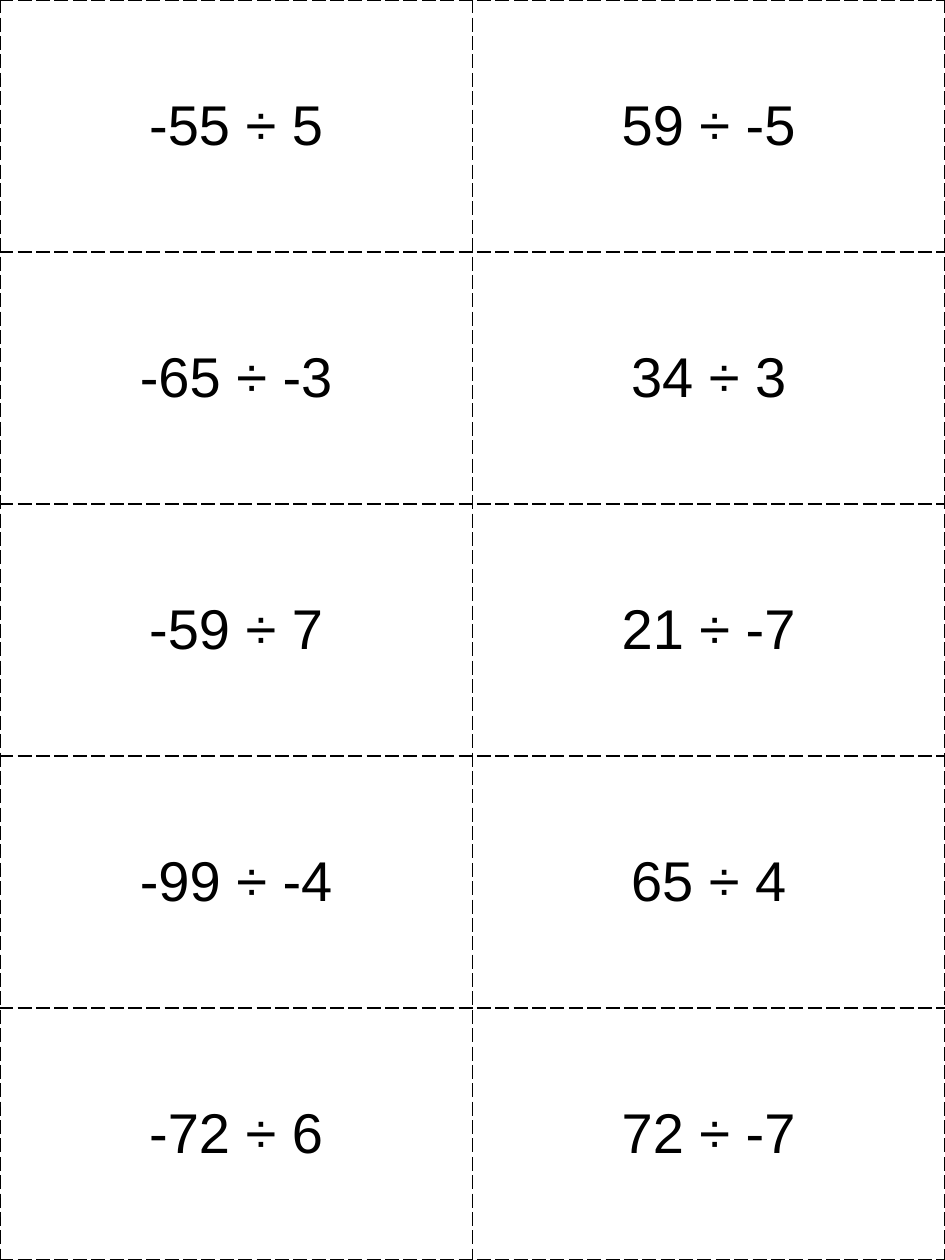
from dataclasses import dataclass

import pptx
import pptx.dml.color
import pptx.enum.text
import pptx.oxml.ns
import pptx.table
import pptx.util
from lxml import etree

Inches = pptx.util.Inches
WIDTH, HEIGHT = 7.5, 10
BLACK, WHITE = "000000", "FFFFFF"


@dataclass
class Card:
    dividend: int
    divisor: int

    @property
    def text(self) -> str:
        return f"{self.dividend} ÷ {self.divisor}"


CARD_ROWS = [
    (Card(-55, 5), Card(59, -5)),
    (Card(-65, -3), Card(34, 3)),
    (Card(-59, 7), Card(21, -7)),
    (Card(-99, -4), Card(65, 4)),
    (Card(-72, 6), Card(72, -7)),
]


def rgb(color: str) -> pptx.dml.color.RGBColor:
    return pptx.dml.color.RGBColor.from_string(color)


def add_cut_lines(cell: pptx.table._Cell, color: str, width: float) -> None:
    qn = pptx.oxml.ns.qn
    tcPr = cell._tc.get_or_add_tcPr()
    for side in ("lnL", "lnR", "lnT", "lnB"):
        ln = etree.SubElement(tcPr, qn(f"a:{side}"), w=str(pptx.util.Pt(width)))
        fill = etree.SubElement(ln, qn("a:solidFill"))
        etree.SubElement(fill, qn("a:srgbClr"), val=color)
        etree.SubElement(ln, qn("a:prstDash"), val="lgDash")


def draw_card(cell: pptx.table._Cell, card: Card) -> None:
    add_cut_lines(cell, BLACK, 1)
    cell.fill.background()
    cell.vertical_anchor = pptx.enum.text.MSO_ANCHOR.MIDDLE
    cell.margin_left = cell.margin_right = Inches(0.1)
    cell.margin_top = cell.margin_bottom = Inches(0.05)
    p = cell.text_frame.paragraphs[0]
    p.text = card.text
    p.alignment = pptx.enum.text.PP_ALIGN.CENTER
    p.font.name = "Arial"
    p.font.size = pptx.util.Pt(32)
    p.font.color.rgb = rgb(BLACK)


def main() -> None:
    prs = pptx.Presentation()
    prs.slide_width, prs.slide_height = Inches(WIDTH), Inches(HEIGHT)
    s = prs.slides.add_slide(prs.slide_layouts[6])
    s.background.fill.solid()
    s.background.fill.fore_color.rgb = rgb(WHITE)

    table = s.shapes.add_table(
        len(CARD_ROWS), len(CARD_ROWS[0]), 0, 0, Inches(WIDTH), Inches(HEIGHT)
    ).table
    table.first_row = table.horz_banding = False
    for r, cards in enumerate(CARD_ROWS):
        for c, card in enumerate(cards):
            draw_card(table.cell(r, c), card)

    prs.save("out.pptx")


if __name__ == "__main__":
    main()
